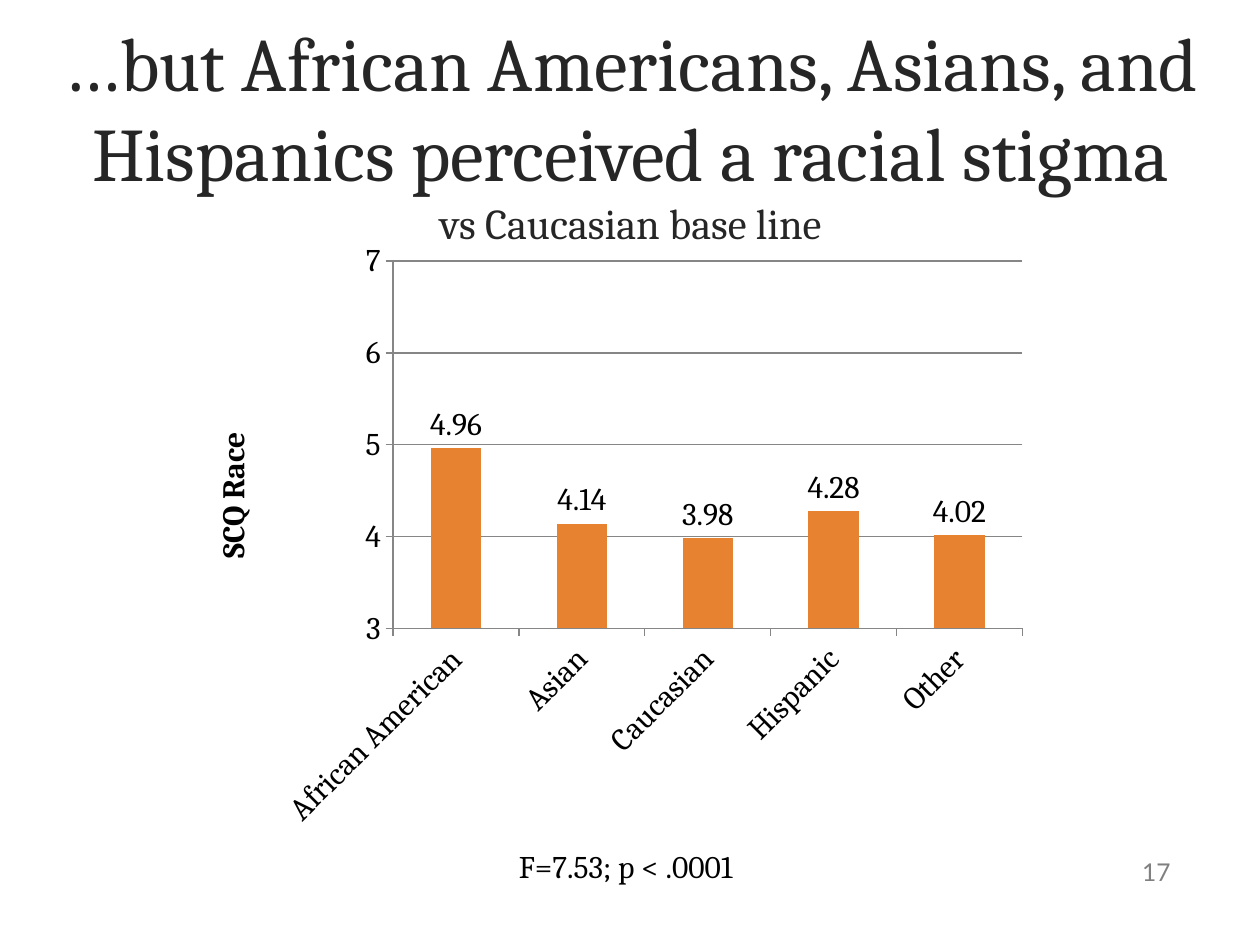
from lxml.etree import SubElement
from pptx import Presentation
from pptx.chart.data import CategoryChartData
from pptx.dml.color import RGBColor
from pptx.enum.chart import XL_CHART_TYPE, XL_LABEL_POSITION, XL_TICK_MARK
from pptx.enum.text import MSO_ANCHOR, MSO_AUTO_SIZE, PP_ALIGN
from pptx.oxml.ns import qn
from pptx.util import Inches, Pt

BLACK = RGBColor(0x00, 0x00, 0x00)
INK = RGBColor(0x26, 0x26, 0x26)
GRAY = RGBColor(0x80, 0x80, 0x80)
AXIS = RGBColor(0x86, 0x86, 0x86)
ORANGE = RGBColor(0xE6, 0x82, 0x30)
WHITE = RGBColor(0xFF, 0xFF, 0xFF)
SERIF = "Cambria"


def add_text(p, text, size=18, color=BLACK, font=SERIF, align=PP_ALIGN.LEFT):
    p.alignment = align
    r = p.add_run()
    r.text = text
    r.font.size = Pt(size)
    r.font.name = font
    r.font.color.rgb = color


def set_layout(parent, **values):
    """Fill the c:layout of a chart part with fractions of the chart's size."""
    layout = parent.get_or_add_layout() if hasattr(parent, "get_or_add_layout") else parent.find(qn("c:layout"))
    if layout is None:
        layout = SubElement(parent, qn("c:layout"))
        parent.insert(0, layout)
    for child in list(layout):
        layout.remove(child)
    manual = SubElement(layout, qn("c:manualLayout"))
    for tag, value in values.items():
        SubElement(manual, qn(f"c:{tag}")).set("val", str(value))


prs = Presentation()
prs.slide_width, prs.slide_height = Inches(10), Inches(7.5)
s = prs.slides.add_slide(prs.slide_layouts[5])
s.background.fill.solid()
s.background.fill.fore_color.rgb = WHITE

# Title with its smaller second line
title = s.shapes.title
title.left, title.top = Inches(0.17), Inches(0.42)
title.width, title.height = Inches(9.67), Inches(1.25)
tf = title.text_frame
tf.auto_size = MSO_AUTO_SIZE.NONE
tf.vertical_anchor = MSO_ANCHOR.MIDDLE
p = tf.paragraphs[0]
add_text(p, "…but African Americans, Asians, and Hispanics perceived a racial stigma",
         size=43.2, color=INK, align=PP_ALIGN.CENTER)
p.add_line_break()
add_text(p, "vs Caucasian base line", size=24.3, color=INK, align=PP_ALIGN.CENTER)

# Chart
data = CategoryChartData(number_format="0.00")
data.categories = ["African American", "Asian", "Caucasian", "Hispanic", "Other"]
data.add_series("Series 1", (4.96, 4.14, 3.98, 4.28, 4.02))
chart = s.shapes.add_chart(XL_CHART_TYPE.COLUMN_CLUSTERED, Inches(1.5), Inches(1.83),
                           Inches(6.75), Inches(4.86), data).chart
chart.has_legend = False
chart.has_title = False
chart.font.size = Pt(18)
chart.font.name = SERIF
chart.font.color.rgb = BLACK

plot = chart.plots[0]
plot.gap_width = 150
plot.vary_by_categories = False
fill = plot.series[0].format.fill
fill.solid()
fill.fore_color.rgb = ORANGE
plot.has_data_labels = True
labels = plot.data_labels
labels.show_value = True
labels.number_format, labels.number_format_is_linked = "0.00", False
labels.position = XL_LABEL_POSITION.OUTSIDE_END

cat_axis, val_axis = chart.category_axis, chart.value_axis
val_axis.minimum_scale, val_axis.maximum_scale, val_axis.major_unit = 3, 7, 1
val_axis.has_major_gridlines = True
val_axis.tick_labels.number_format = "0"
val_axis.tick_labels.number_format_is_linked = False
for axis in (cat_axis, val_axis):
    axis.major_tick_mark = XL_TICK_MARK.OUTSIDE
    axis.minor_tick_mark = XL_TICK_MARK.NONE
    axis.tick_labels.font.size = Pt(18)
for part in (cat_axis, val_axis, val_axis.major_gridlines):
    part.format.line.color.rgb = AXIS
    part.format.line.width = Pt(0.75)
cat_axis._element.find(qn("c:txPr")).find(qn("a:bodyPr")).set("rot", "-2700000")

add_text(val_axis.axis_title.text_frame.paragraphs[0], "SCQ Race", align=PP_ALIGN.CENTER)
val_axis.axis_title.text_frame.paragraphs[0].runs[0].font.bold = True
val_axis.axis_title.text_frame._txBody.find(qn("a:bodyPr")).set("rot", "-5400000")
set_layout(val_axis.axis_title._element, xMode="edge", yMode="edge", x=0.02, y=0.32)
set_layout(chart._chartSpace.chart.plotArea, layoutTarget="inner", xMode="edge", yMode="edge",
           x=0.24, y=0.05, w=0.74, h=0.6)

# Test statistic and page number
stat = s.shapes.add_textbox(Inches(4.02), Inches(6.67), Inches(1.97), Inches(0.4))
stat.text_frame.word_wrap = False
stat.text_frame.auto_size = MSO_AUTO_SIZE.SHAPE_TO_FIT_TEXT
add_text(stat.text_frame.paragraphs[0], "F=7.53; p < .0001")

number = s.shapes.add_textbox(Inches(7.06), Inches(6.72), Inches(2.33), Inches(0.4))
number.text_frame.word_wrap = True
number.text_frame.vertical_anchor = MSO_ANCHOR.MIDDLE
add_text(number.text_frame.paragraphs[0], "17", size=14, color=GRAY, font="Lato",
         align=PP_ALIGN.RIGHT)

prs.save("out.pptx")
